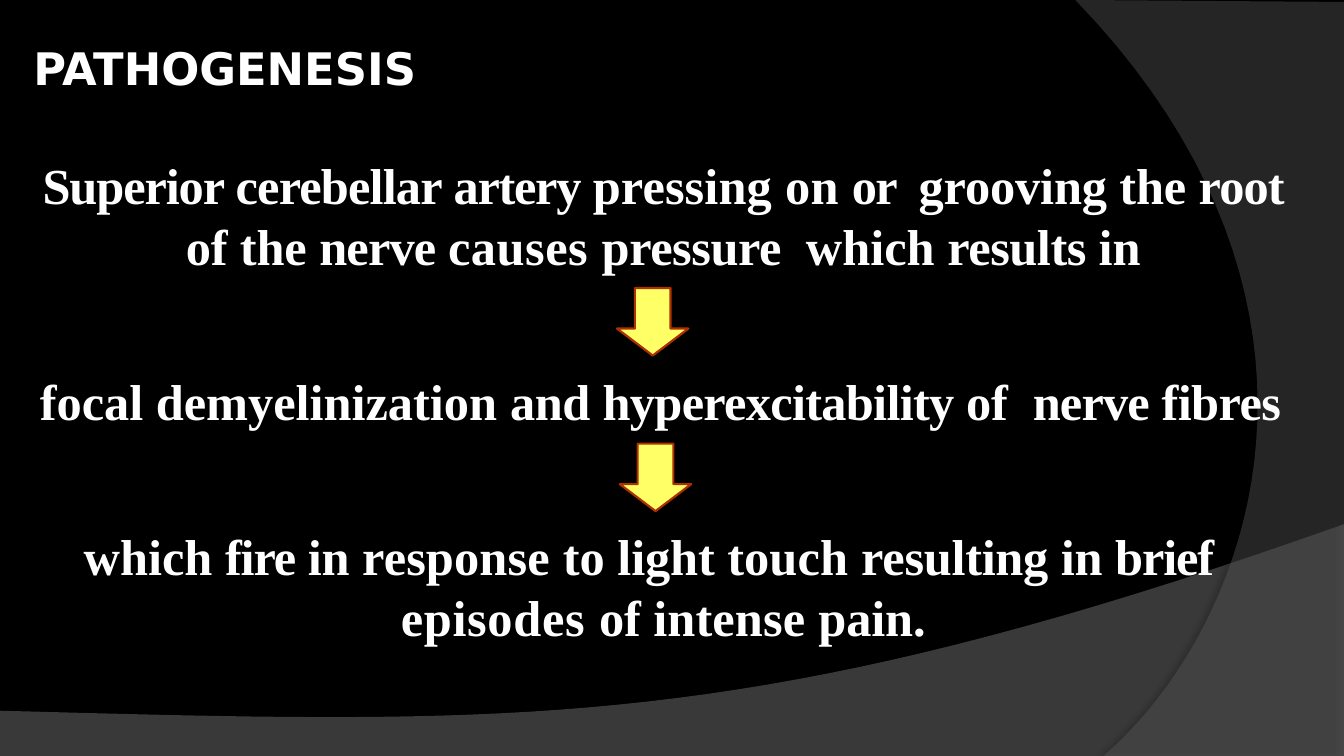
"""Builds the slide on the pathogenesis of nerve pain."""
import pptx
import pptx.dml.color
import pptx.enum.shapes
import pptx.enum.text
import pptx.oxml
import pptx.oxml.ns
import pptx.util
from pptx.util import Cm

WHITE = "FFFFFF"
SERIF = "Times New Roman"
CAUSE = [
    ("Superior ", -0.8), ("cerebellar ", -0.6), ("artery ", -0.9), ("pressing ", 0.1),
    ("on ", 0.2), ("or  ", -1.2), ("grooving the ", -0.1), ("root ", -0.6),
    ("of the ", -0.1), ("nerve ", -0.6), ("causes ", 0.4), ("pressure  ", -0.3),
    ("which ", 0), ("results ", -0.3), ("in", -0.1),
]
CHANGE = [
    ("focal demyelinization ", 0), ("and ", -0.3), ("hyperexcitability ", -0.5),
    ("of  ", -0.1), ("nerve ", -0.6), ("fibres", -0.4),
]
EFFECT = [
    ("which ", 0), ("fire ", -0.8), ("in ", -0.1), ("response ", 0.1), ("to ", 0),
    ("light ", -0.1), ("touch ", 0.1), ("resulting ", -0.2), ("in ", -0.1),
    ("brief\t", -0.8), ("episodes ", 0.5), ("of ", -0.1), ("intense ", 0.1),
    ("pain.", -0.1),
]


def rgb(code):
    """Return the colour for a hex string."""
    return pptx.dml.color.RGBColor.from_string(code)


def curve_points(start, first, second, end, steps=40):
    """Return points along a cubic curve, without its start."""
    points = []
    for step in range(1, steps + 1):
        t = step / steps
        weights = ((1 - t) ** 3, 3 * t * (1 - t) ** 2, 3 * t * t * (1 - t), t ** 3)
        points.append(tuple(
            sum(weight * value for weight, value in zip(weights, values))
            for values in zip(start, first, second, end)
        ))
    return points


def add_swoosh(slide, corners, curve, color, opacity, shadow_opacity, direction):
    """Add a translucent backdrop with straight corners and one curved edge."""
    points = [
        (Cm(x), Cm(y)) for x, y in corners + curve_points(corners[-1], *curve)
    ]
    builder = slide.shapes.build_freeform(*points[0])
    builder.add_line_segments(points[1:], close=True)
    shape = builder.convert_to_shape()
    shape.fill.solid()
    shape.fill.fore_color.rgb = rgb(color)
    shape.line.fill.background()
    properties = shape._element.spPr
    color_element = properties.find(".//" + pptx.oxml.ns.qn("a:srgbClr"))
    alpha = pptx.oxml.parse_xml(
        f'<a:alpha {pptx.oxml.ns.nsdecls("a")} val="{opacity * 1000}"/>'
    )
    color_element.append(alpha)
    properties.append(pptx.oxml.parse_xml(
        f'<a:effectLst {pptx.oxml.ns.nsdecls("a")}>'
        f'<a:outerShdw blurRad="{pptx.util.Pt(4)}" dist="{pptx.util.Pt(4)}" '
        f'dir="{direction * 60000}" algn="ctr" rotWithShape="0">'
        f'<a:srgbClr val="000000"><a:alpha val="{shadow_opacity * 1000}"/></a:srgbClr>'
        '</a:outerShdw></a:effectLst>'
    ))


def add_down_arrow(slide, left, top):
    """Add a yellow arrow that leads to the next step."""
    shape = slide.shapes.add_shape(
        pptx.enum.shapes.MSO_SHAPE.DOWN_ARROW, Cm(left), Cm(top), Cm(1.8), Cm(1.7)
    )
    shape.adjustments[0] = 0.5
    shape.adjustments[1] = 0.4
    shape.shadow.inherit = False
    shape.fill.solid()
    shape.fill.fore_color.rgb = rgb("FFFF66")
    shape.line.color.rgb = rgb("AD3000")
    shape.line.width = pptx.util.Pt(1.56)


def style_paragraph(paragraph, font_name, size, space_before, left, right=0):
    """Set the font, the space above and the side margins in centimetres."""
    paragraph.font.name = font_name
    paragraph.font.size = pptx.util.Pt(size)
    paragraph.font.bold = True
    paragraph.font.color.rgb = rgb(WHITE)
    paragraph.space_before = pptx.util.Pt(space_before)
    properties = paragraph._p.get_or_add_pPr()
    properties.set("marL", str(Cm(left)))
    properties.set("marR", str(Cm(right)))
    properties.set("indent", "0")


def add_step(frame, pieces, space_before, left, right):
    """Add a centred paragraph from pieces of text with letter spacing."""
    paragraph = frame.add_paragraph()
    style_paragraph(paragraph, SERIF, 36, space_before, left, right)
    paragraph.alignment = pptx.enum.text.PP_ALIGN.CENTER
    paragraph.line_spacing = pptx.util.Pt(43.6)
    for text, spacing in pieces:
        run = paragraph.add_run()
        run.text = text
        run._r.get_or_add_rPr().set("spc", str(round(spacing * 100)))


def add_content(slide):
    """Add the title and the three steps in one text box."""
    box = slide.shapes.add_textbox(Cm(0), Cm(0.89), Cm(33.43), Cm(15.6))
    frame = box.text_frame
    frame.word_wrap = True
    frame.margin_left = frame.margin_right = frame.margin_bottom = 0
    frame.margin_top = Cm(0.13)
    title = frame.paragraphs[0]
    title.text = "PATHOGENESIS"
    style_paragraph(title, "DejaVu Sans", 32, 3.5, 0.84)
    add_step(frame, CAUSE, 42.4, 0.45, 0.45)
    add_step(frame, CHANGE, 67.1, 0.56, 0.7)
    add_step(frame, EFFECT, 67.1, 0.03, 0.03)


def main():
    """Build and save the presentation."""
    presentation = pptx.Presentation()
    presentation.slide_width = Cm(33.87)
    presentation.slide_height = Cm(19.05)
    slide = presentation.slides.add_slide(presentation.slide_layouts[6])
    slide.background.fill.solid()
    slide.background.fill.fore_color.rgb = rgb("000000")
    add_swoosh(
        slide, [(0, 17.91), (0, 19.05), (33.87, 19.05), (33.87, 13.21)],
        [(18.92, 18.52), (13.23, 18.26), (0, 17.91)], "7F7F7F", 45, 35, 270,
    )
    add_swoosh(
        slide, [(33.87, 0.05), (33.87, 19.05), (27.81, 19.05)],
        [(31.65, 15.72), (34.47, 7.62), (27.1, 0)], "5E5E5E", 40, 45, 180,
    )
    add_content(slide)
    add_down_arrow(slide, 15.55, 7.26)
    add_down_arrow(slide, 15.62, 11.18)
    presentation.save("out.pptx")


if __name__ == "__main__":
    main()
